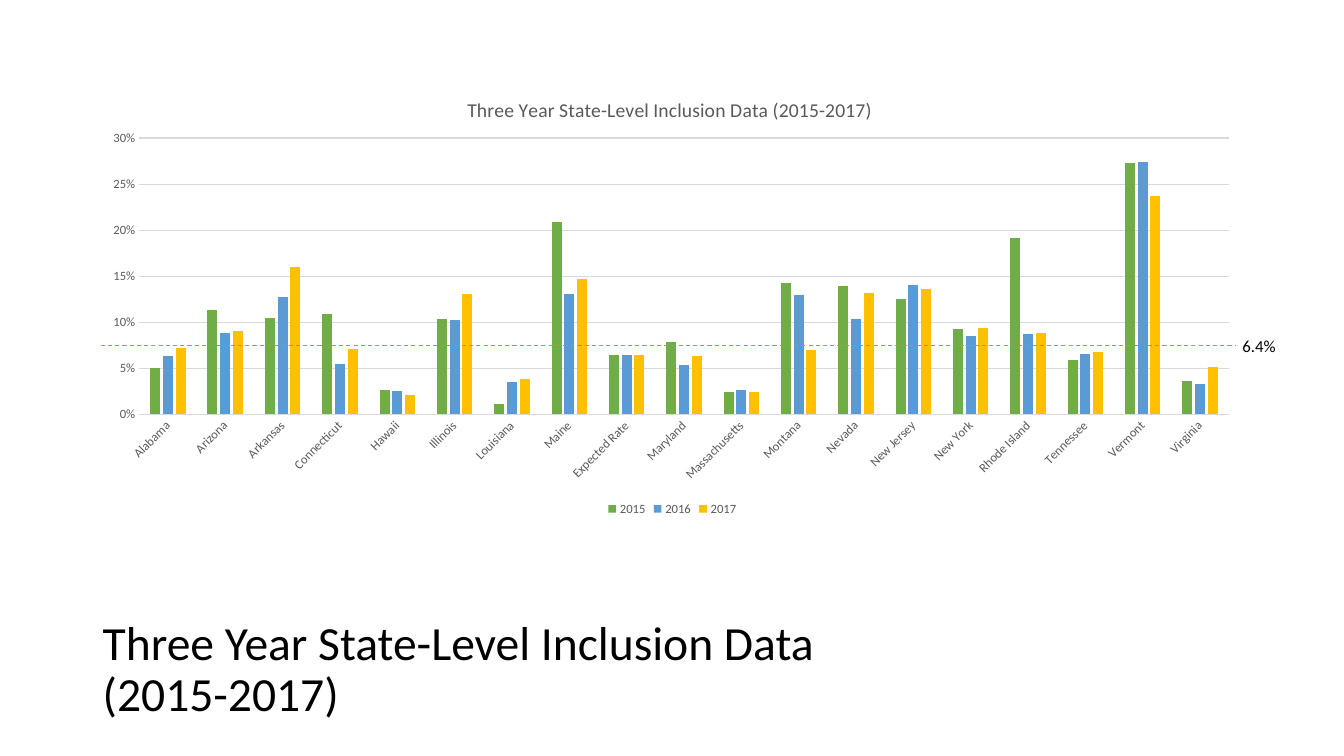
from lxml import etree
from pptx import Presentation
from pptx.chart.data import CategoryChartData
from pptx.dml.color import RGBColor
from pptx.enum.chart import XL_CHART_TYPE, XL_LEGEND_POSITION, XL_TICK_MARK
from pptx.enum.dml import MSO_LINE
from pptx.enum.shapes import MSO_CONNECTOR
from pptx.enum.text import MSO_ANCHOR, MSO_AUTO_SIZE
from pptx.oxml.ns import qn
from pptx.util import Cm, Pt

COLUMNS = XL_CHART_TYPE.COLUMN_CLUSTERED
BOTTOM = XL_LEGEND_POSITION.BOTTOM
NO_TICK = XL_TICK_MARK.NONE
DASH = MSO_LINE.DASH
STRAIGHT = MSO_CONNECTOR.STRAIGHT
MIDDLE = MSO_ANCHOR.MIDDLE
TOP = MSO_ANCHOR.TOP
FIT_SHAPE = MSO_AUTO_SIZE.SHAPE_TO_FIT_TEXT

FONT = "Calibri"
BLACK, GREY, PALE, ORANGE = "000000", "595959", "D9D9D9", "ED7D31"
HEADING = "Three Year State-Level Inclusion Data\v(2015-2017)"
CHART_TITLE = "Three Year State-Level Inclusion Data (2015-2017)"
EXPECTED_RATE = "6.4%"
YEARS = {"2015": "70AD47", "2016": "5B9BD5", "2017": "FFC000"}
RATES = [
    ("Alabama", 0.05, 0.063, 0.072),
    ("Arizona", 0.113, 0.088, 0.091),
    ("Arkansas", 0.105, 0.127, 0.16),
    ("Connecticut", 0.109, 0.055, 0.071),
    ("Hawaii", 0.027, 0.026, 0.021),
    ("Illinois", 0.104, 0.102, 0.131),
    ("Louisiana", 0.011, 0.035, 0.038),
    ("Maine", 0.209, 0.131, 0.147),
    ("Expected Rate", 0.064, 0.064, 0.064),
    ("Maryland", 0.079, 0.054, 0.063),
    ("Massachusetts", 0.024, 0.027, 0.024),
    ("Montana", 0.143, 0.13, 0.07),
    ("Nevada", 0.139, 0.104, 0.132),
    ("New Jersey", 0.125, 0.14, 0.136),
    ("New York", 0.093, 0.085, 0.094),
    ("Rhode Island", 0.192, 0.087, 0.088),
    ("Tennessee", 0.059, 0.066, 0.068),
    ("Vermont", 0.273, 0.274, 0.237),
    ("Virginia", 0.036, 0.033, 0.051),
]
CHART_BOX = (2.34, 1.78, 29.21, 11.33)
HEADING_BOX = (2.34, 15.37, 21.44, 3.05)
RATE_BOX = (31.06, 8.33, 1.37, 0.76)
RATE_LINE = (2.54, 8.71, 31.14, 8.71)


def rgb(code):
    return RGBColor.from_string(code)


def style_font(font, size, color):
    font.name, font.size, font.bold = FONT, Pt(size), False
    font.color.rgb = rgb(color)


def style_line(line, color):
    line.color.rgb = rgb(color)
    line.width = Pt(0.75)


def place(element, index, **fractions):
    for old in element.findall(qn("c:layout")):
        element.remove(old)
    layout = etree.Element(qn("c:layout"))
    manual = etree.SubElement(layout, qn("c:manualLayout"))
    if "w" in fractions:
        etree.SubElement(manual, qn("c:layoutTarget")).set("val", "inner")
    for key in ("x", "y"):
        etree.SubElement(manual, qn(f"c:{key}Mode")).set("val", "edge")
    for key, value in fractions.items():
        etree.SubElement(manual, qn(f"c:{key}")).set("val", str(value))
    element.insert(index, layout)


def add_text(page, box, text, size, anchor, wrap):
    shape = page.shapes.add_textbox(*map(Cm, box))
    frame = shape.text_frame
    frame.text = text
    frame.word_wrap, frame.vertical_anchor = wrap, anchor
    for span in frame.paragraphs[0].runs:
        style_font(span.font, size, BLACK)
    return frame


def add_rates_chart(page):
    data = CategoryChartData(number_format="0.00%")
    states, *columns = zip(*RATES)
    data.categories = states
    for year, values in zip(YEARS, columns):
        data.add_series(year, values)
    chart = page.shapes.add_chart(COLUMNS, *map(Cm, CHART_BOX), data).chart
    style_font(chart.font, 10, BLACK)

    chart.has_title = True
    title = chart.chart_title
    title.text_frame.text = CHART_TITLE
    style_font(title.text_frame.paragraphs[0].runs[0].font, 14, GREY)
    place(title._element, 1, x=0.32, y=0.05)

    chart.has_legend = True
    chart.legend.position = BOTTOM
    chart.legend.include_in_layout = False
    style_font(chart.legend.font, 9, GREY)

    plot = chart.plots[0]
    plot.gap_width, plot.overlap, plot.vary_by_categories = 219, -27, False
    for series, color in zip(plot.series, YEARS.values()):
        series.format.fill.solid()
        series.format.fill.fore_color.rgb = rgb(color)
        series.invert_if_negative = False

    for axis in (chart.category_axis, chart.value_axis):
        axis.major_tick_mark = axis.minor_tick_mark = NO_TICK
        style_font(axis.tick_labels.font, 9, GREY)
    style_line(chart.category_axis.format.line, PALE)
    labels = chart.category_axis.tick_labels
    labels.font._element.getparent().getparent().getparent().find(
        qn("a:bodyPr")).set("rot", "-2700000")

    scale = chart.value_axis
    scale.minimum_scale, scale.maximum_scale, scale.major_unit = 0, 0.3, 0.05
    scale.tick_labels.number_format = "0%"
    scale.tick_labels.number_format_is_linked = False
    scale.format.line.fill.background()
    style_line(scale.major_gridlines.format.line, PALE)
    plot_area = chart._chartSpace.chart.plotArea
    place(plot_area, 0, x=0.04, y=0.15, w=0.94, h=0.615)


def add_rate_line(page):
    rate_line = page.shapes.add_connector(STRAIGHT, *map(Cm, RATE_LINE))
    style_line(rate_line.line, ORANGE)
    rate_line.line.dash_style = DASH
    etree.SubElement(rate_line._element.spPr, qn("a:effectLst"))


def main():
    """Build the slide of state inclusion rates and save it."""
    deck = Presentation()
    deck.slide_width, deck.slide_height = Cm(33.87), Cm(19.05)
    page = deck.slides.add_slide(deck.slide_layouts[6])
    heading = add_text(page, HEADING_BOX, HEADING, 34, MIDDLE, True)
    heading.paragraphs[0].line_spacing = 0.9
    add_rates_chart(page)
    add_rate_line(page)
    rate = add_text(page, RATE_BOX, EXPECTED_RATE, 12, TOP, False)
    rate.auto_size = FIT_SHAPE
    deck.save("out.pptx")


if __name__ == "__main__":
    main()
